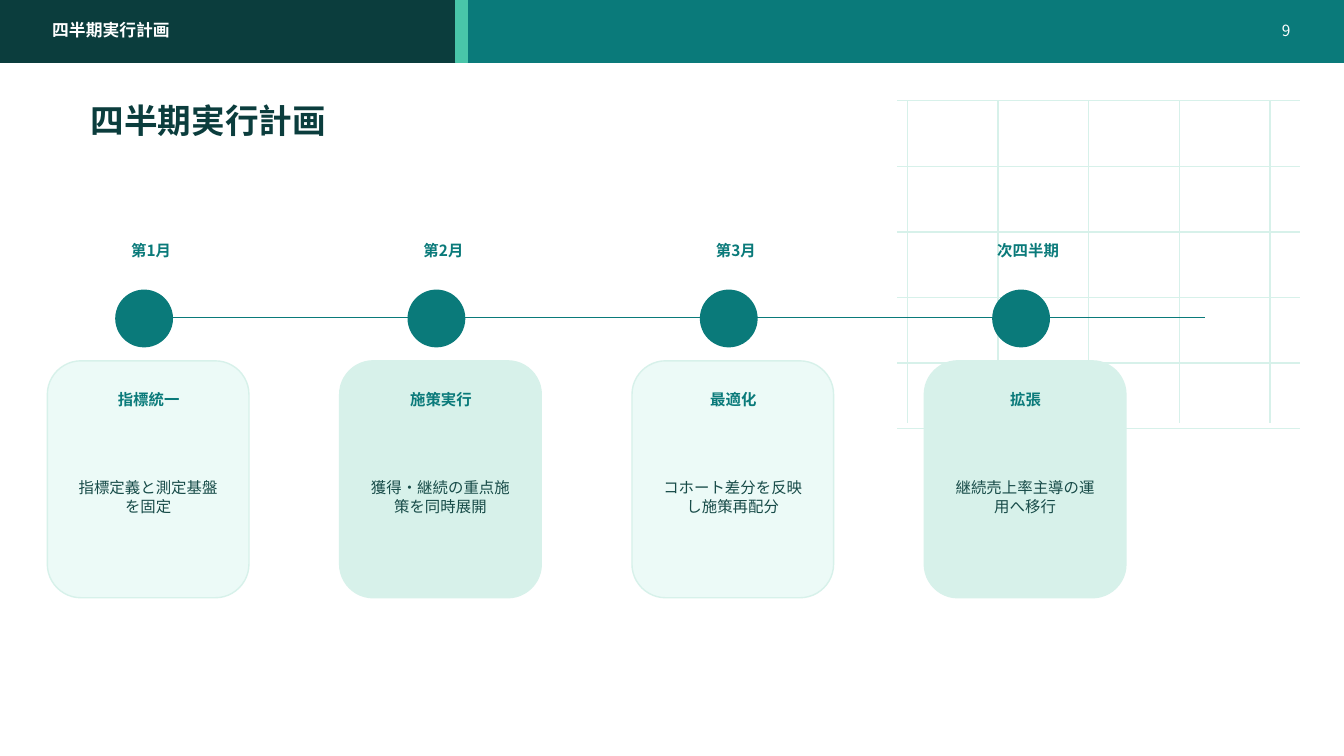
from lxml.etree import SubElement
from pptx import Presentation
from pptx.dml.color import RGBColor
from pptx.enum.shapes import MSO_CONNECTOR, MSO_SHAPE
from pptx.enum.text import MSO_ANCHOR, MSO_AUTO_SIZE, PP_ALIGN
from pptx.oxml.ns import qn
from pptx.util import Inches, Pt

TEAL = RGBColor(0x0A, 0x7A, 0x7A)
DEEP = RGBColor(0x0B, 0x3D, 0x3D)
ACCENT = RGBColor(0x49, 0xC5, 0xA9)
MINT = RGBColor(0xD7, 0xF1, 0xEA)
PALE = RGBColor(0xEC, 0xFA, 0xF7)
INK = RGBColor(0x17, 0x4B, 0x48)
WHITE = RGBColor(0xFF, 0xFF, 0xFF)

CELL = Inches(0.1)
COLUMNS, ROWS = 133.33, 75
HEADING = "四半期実行計画"
STAGE_PITCH = 29
STAGES = [
    ("第1月", "指標統一", "指標定義と測定基盤を固定"),
    ("第2月", "施策実行", "獲得・継続の重点施策を同時展開"),
    ("第3月", "最適化", "コホート差分を反映し施策再配分"),
    ("次四半期", "拡張", "継続売上率主導の運用へ移行"),
]


def apply(target, values):
    for name, value in values.items():
        setattr(target, name, value)


def cells(*lengths):
    return [round(length * CELL) for length in lengths]


class PlanSlide:
    face = "Noto Sans CJK JP"
    line_width = Pt(1)

    def __init__(self, deck):
        self.page = deck.slides.add_slide(deck.slide_layouts[5])

    def line(self, start, end, color):
        connector = self.page.shapes.add_connector(
            MSO_CONNECTOR.STRAIGHT, *cells(*start, *end))
        connector.line.color.rgb = color
        connector.line.width = self.line_width
        SubElement(connector._element.spPr, qn("a:effectLst"))

    def shape(self, kind, place, fill, outline):
        shape = self.page.shapes.add_shape(kind, *cells(*place))
        shape.shadow.inherit = False
        shape.fill.solid()
        shape.fill.fore_color.rgb = fill
        shape.line.color.rgb = outline
        shape.line.width = self.line_width

    def fill_text(self, box, text, color, size, bold, align, face):
        apply(box.text_frame, {
            "word_wrap": True,
            "auto_size": MSO_AUTO_SIZE.NONE,
            "vertical_anchor": MSO_ANCHOR.MIDDLE,
        })
        para = box.text_frame.paragraphs[0]
        para.alignment = align
        span = para.add_run()
        span.text = text
        apply(span.font, {"name": face, "size": Pt(size), "bold": bold})
        span.font.color.rgb = color
        SubElement(span.font._element, qn("a:ea"), typeface=face)

    def text(self, place, text, color, size=11, bold=False, align=PP_ALIGN.CENTER):
        box = self.page.shapes.add_textbox(*cells(*place))
        self.fill_text(box, text, color, size, bold, align, self.face)

    def title(self, place, text):
        box = self.page.shapes.title
        apply(box, dict(zip(("left", "top", "width", "height"), cells(*place))))
        self.fill_text(box, text, DEEP, 24, True, PP_ALIGN.LEFT, "Lato")

    def backdrop(self):
        for index in range(6):
            row = 10 + 6.5 * index
            self.line((89, row), (129, row), MINT)
        for index in range(5):
            column = 90 + 9 * index
            self.line((column, 10), (column, 42), MINT)

    def header(self):
        for left, width, color in ((0, COLUMNS, TEAL), (0, 46, DEEP), (45.2, 1.2, ACCENT)):
            self.shape(MSO_SHAPE.RECTANGLE, (left, 0, width, 6.2), color, color)
        self.text((4.2, 1.7, 88, 2.6), HEADING, WHITE, 12, True, PP_ALIGN.LEFT)
        self.text((121.5, 1.7, 7.5, 2.6), "9", WHITE, align=PP_ALIGN.RIGHT)

    def stage(self, index, period, goal, detail):
        left = 4.7 + STAGE_PITCH * index
        self.shape(MSO_SHAPE.OVAL, (left + 6.8, 28.8, 5.6, 5.6), TEAL, TEAL)
        self.text((left + 5.8, 23.6, 9, 2.4), period, TEAL, bold=True)
        self.shape(MSO_SHAPE.ROUNDED_RECTANGLE, (left, 35.8, 20, 23.5),
                   MINT if index % 2 else PALE, MINT)
        self.text((left + 2.3, 38.5, 15.5, 2.2), goal, TEAL, bold=True)
        self.text((left + 1.4, 41.8, 17.2, 15), detail, INK)


def main():
    deck = Presentation()
    apply(deck, dict(zip(("slide_width", "slide_height"), cells(COLUMNS, ROWS))))
    plan = PlanSlide(deck)
    plan.backdrop()
    plan.header()
    plan.title((8, 9.5, 114, 4.8), HEADING)
    plan.line((13.5, 31.5), (119.5, 31.5), TEAL)
    for index, stage in enumerate(STAGES):
        plan.stage(index, *stage)
    deck.save("out.pptx")


if __name__ == "__main__":
    main()
